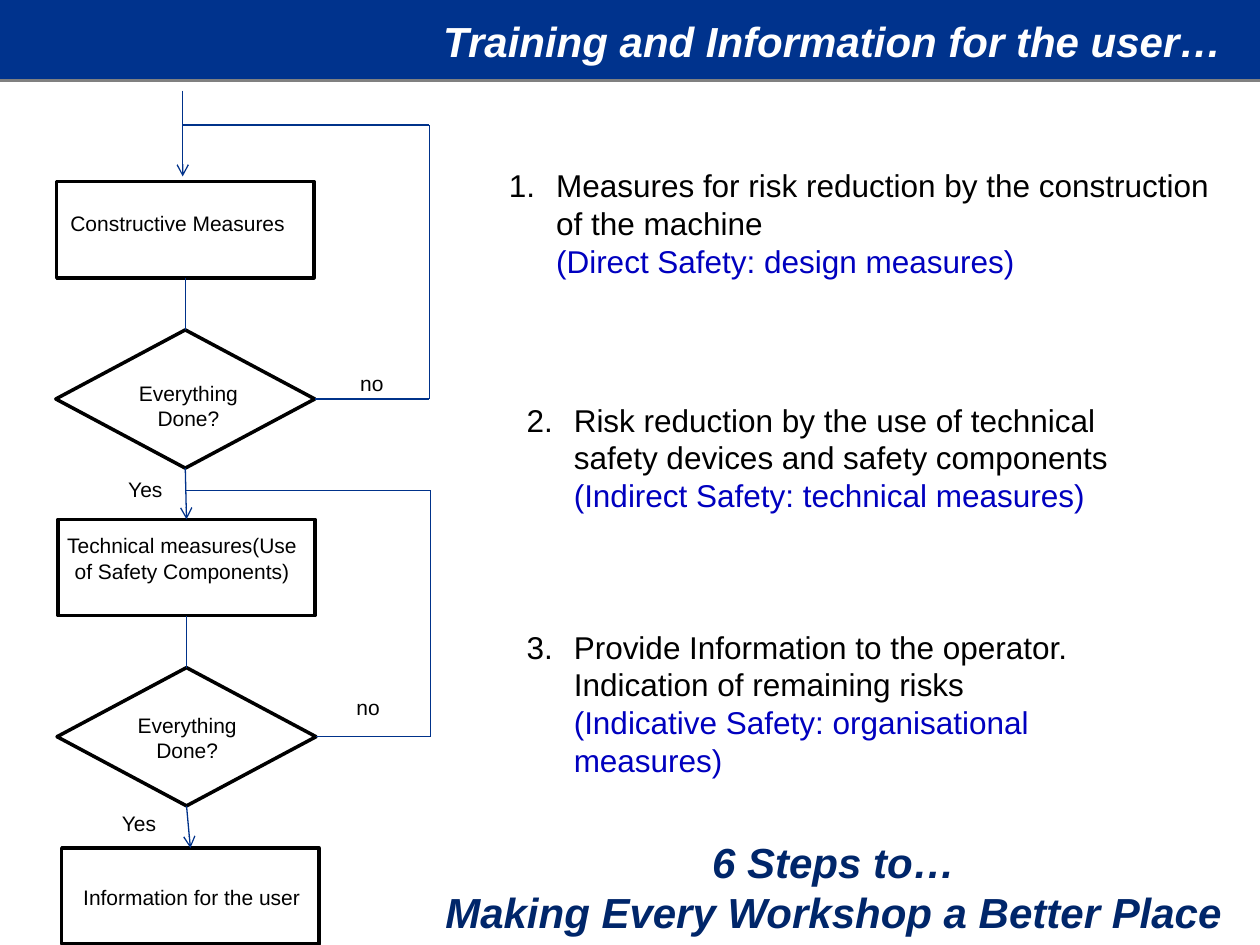
from lxml import etree
from pptx import Presentation
from pptx.dml.color import RGBColor
from pptx.enum import shapes, text
from pptx.oxml.ns import qn
from pptx.util import Pt

HUE = {"bar": "00338D", "rule": "808080", "flow": "00328A", "ink": "000000",
       "note": "0000BF", "slogan": "00266A", "white": "FFFFFF"}
BOX_W, BOX_H = 147, 55
GEM_W, GEM_H = 148, 79
TOP, BOTTOM, RIGHT = 0, 2, 3
LEFT, MID = text.PP_ALIGN.LEFT, text.PP_ALIGN.CENTER


def rgb(name):
    return RGBColor.from_string(HUE[name])


def shape(slide, kind, left, top, width, height, fill=None, line=None):
    item = slide.shapes.add_shape(kind, Pt(left), Pt(top), Pt(width), Pt(height))
    item.shadow.inherit = False
    if fill:
        item.fill.solid()
        item.fill.fore_color.rgb = rgb(fill)
    else:
        item.fill.background()
    if line:
        item.line.color.rgb = rgb(line)
        item.line.width = Pt(2)
    else:
        item.line.fill.background()
    return item


def link(slide, start, end, arrow=False, color="flow", width=0.75):
    """Draw a line; each end is a point or a (shape, side) pair."""
    ends = [start, end]
    free = [(0, 0) if hasattr(e[0], "shape_id") else e for e in ends]
    line = slide.shapes.add_connector(
        shapes.MSO_CONNECTOR.STRAIGHT, *[Pt(v) for point in free for v in point])
    for spot, join in zip(ends, (line.begin_connect, line.end_connect)):
        if hasattr(spot[0], "shape_id"):
            join(*spot)
    line.line.color.rgb = rgb(color)
    line.line.width = Pt(width)
    props = line._element.spPr
    if arrow:
        etree.SubElement(props.find(qn("a:ln")), qn("a:tailEnd"), type="arrow")
    etree.SubElement(props, qn("a:effectLst"))


def write(para, words, size, color, bold=False):
    run = para.add_run()
    run.text = words
    font = run.font
    font.name, font.size = "Arial", Pt(size)
    font.bold = font.italic = bold
    font.color.rgb = rgb(color)


def frame(slide, left, top, width, height):
    body = slide.shapes.add_textbox(Pt(left), Pt(top), Pt(width), Pt(height)).text_frame
    body.word_wrap = True
    return body


def label(slide, words, left, top, width, height=21.6, align=LEFT):
    para = frame(slide, left, top, width, height).paragraphs[0]
    para.alignment = align
    write(para, words, 12, "ink")


def header(slide, width):
    shape(slide, shapes.MSO_SHAPE.RECTANGLE, 0, 0, width, 45.4, fill="bar")
    link(slide, (0, 46), (width, 46), color="rule", width=1.5)
    body = frame(slide, 246.2, 0, width - 246.2, 46.8)
    body.vertical_anchor = text.MSO_ANCHOR.MIDDLE
    write(body.paragraphs[0], "Training and Information for the user…", 24, "white", True)


def stage(slide, left, top, entry, rise, ask, no):
    """Measure box, decision and the 'no' loop that rises above the box."""
    box = shape(slide, shapes.MSO_SHAPE.RECTANGLE, left, top, BOX_W, BOX_H, line="ink")
    gem = shape(slide, shapes.MSO_SHAPE.FLOWCHART_DECISION, left - 0.5, top + 84.7,
                GEM_W, GEM_H, line="ink")
    link(slide, (box, BOTTOM), (gem, TOP))
    side, low, high = left + 213, top + 84.7 + GEM_H / 2, top - rise
    link(slide, (gem, RIGHT), (side, low))
    link(slide, (side, low), (side, high))
    link(slide, (entry, high), (side, high))
    label(slide, "Everything Done?", left + ask[0], top + ask[1], 80, 36, MID)
    label(slide, "no", left + no[0], top + no[1], 39.6)
    return box, gem


def flow(slide, left, top):
    first, check = stage(slide, left, top + 52, left + 72, 32.4, (35.3, 110), (166.3, 104.4))
    link(slide, (left + 72, top), (left + 72, top + 49), arrow=True)
    label(slide, "Constructive Measures", left + 0.7, top + 65, 140)

    second, again = stage(slide, left + 0.7, top + 245, left + 74, 16.6,
                          (33.9, 106.6), (163.5, 96.5))
    link(slide, (check, BOTTOM), (second, TOP), arrow=True)
    label(slide, "Technical measures(Use of Safety Components)",
          left - 4.3, top + 249.2, 152, 36, MID)
    label(slide, "Yes", left + 33.8, top + 216.8, 35.3)

    last = shape(slide, shapes.MSO_SHAPE.RECTANGLE, left + 2.9, top + 432.8,
                 BOX_W, BOX_H, line="ink")
    link(slide, (again, BOTTOM), (last, TOP), arrow=True)
    label(slide, "Information for the user", left + 7.2, top + 450, 140, align=MID)
    label(slide, "Yes", left + 30.2, top + 407.6, 35.3)


def measure(slide, number, words, note, left, top, width):
    """One numbered measure with its blue note below."""
    body = frame(slide, left, top, width, 94)
    for para, line, color in ((body.paragraphs[0], words, "ink"),
                              (body.add_paragraph(), note, "note")):
        props = para._p.get_or_add_pPr()
        props.set("marL", str(Pt(27)))
        if color == "ink":
            props.set("indent", str(Pt(-27)))
            etree.SubElement(props, qn("a:buFont"), typeface="+mj-lt")
            etree.SubElement(props, qn("a:buAutoNum"), type="arabicPeriod",
                             startAt=str(number))
        write(para, line, 18, color)


def slogan(slide, left, top, width):
    body = frame(slide, left, top, width, 65.5)
    for para, line in ((body.paragraphs[0], "6 Steps to…"),
                       (body.add_paragraph(), "Making Every Workshop a Better Place")):
        para.alignment = MID
        write(para, line, 24, "slogan", True)


def main():
    deck = Presentation()
    deck.slide_width, deck.slide_height = Pt(720), Pt(540)
    slide = deck.slides.add_slide(deck.slide_layouts[6])
    header(slide, 720)
    flow(slide, 32.4, 51.8)
    measure(slide, 1, "Measures for risk reduction by the construction of the machine",
            "(Direct Safety: design measures)", 283.7, 91.4, 417.6)
    measure(slide, 2, "Risk reduction by the use of technical safety devices and safety components",
            "(Indirect Safety: technical measures)", 293.8, 225.4, 377.3)
    measure(slide, 3, "Provide Information to the operator. Indication of remaining risks",
            "(Indicative Safety: organisational measures)", 293.8, 355.1, 377.3)
    slogan(slide, 232.6, 474.5, 487.4)
    deck.save("out.pptx")


if __name__ == "__main__":
    main()
